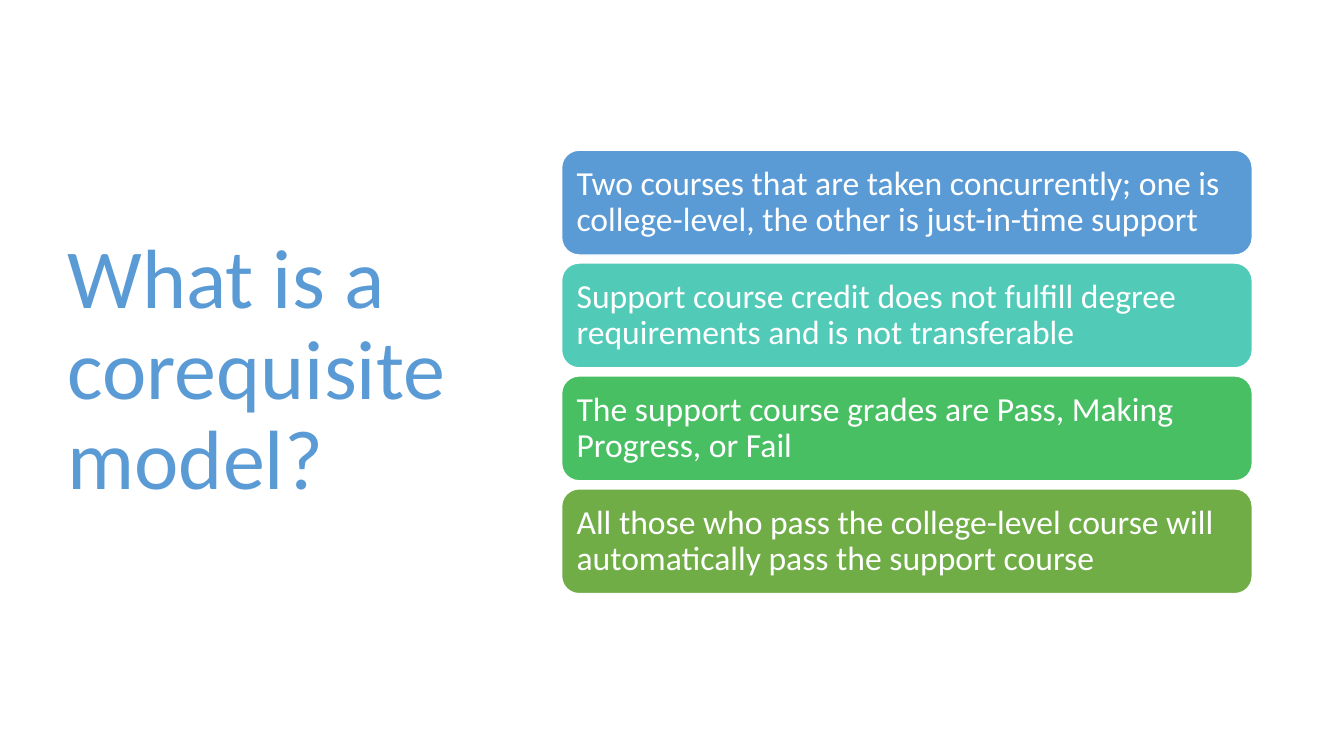
import dataclasses

import pptx
import pptx.dml.color
import pptx.enum.shapes
import pptx.enum.text
import pptx.util

WIDE, HIGH = 13.33, 7.5
LEFT, TOP = 5.57, 1.49
CARD_W, CARD_H = 6.85, 1.04
PITCH = 1.12
FONT = "Calibri"
HUES = {
    "blue": "5B9BD5",
    "teal": "52CAB8",
    "green": "49BF64",
    "olive": "70AD47",
    "white": "FFFFFF",
}


@dataclasses.dataclass
class Card:
    text: str
    hue: str


CARDS = [
    Card("Two courses that are taken concurrently; one is college-level, "
         "the other is just-in-time support", "blue"),
    Card("Support course credit does not fulfill degree requirements "
         "and is not transferable", "teal"),
    Card("The support course grades are Pass, Making Progress, or Fail", "green"),
    Card("All those who pass the college-level course will automatically "
         "pass the support course", "olive"),
]


def tint(hue: str) -> pptx.dml.color.RGBColor:
    return pptx.dml.color.RGBColor.from_string(HUES[hue])


def write(shape, text: str, *, size: float, hue: str, inset: float = 0.1) -> None:
    """Fill a shape with one left-aligned, vertically centred paragraph."""
    frame = shape.text_frame
    frame.word_wrap = True
    frame.auto_size = pptx.enum.text.MSO_AUTO_SIZE.NONE
    frame.vertical_anchor = pptx.enum.text.MSO_ANCHOR.MIDDLE
    frame.margin_left = frame.margin_right = pptx.util.Inches(inset)
    frame.margin_top = frame.margin_bottom = pptx.util.Inches(inset / 2)
    para = frame.paragraphs[0]
    para.alignment = pptx.enum.text.PP_ALIGN.LEFT
    para.line_spacing = 0.9
    run = para.add_run()
    run.text = text
    run.font.name = FONT
    run.font.size = pptx.util.Pt(size)
    run.font.color.rgb = tint(hue)


def place(shape, left: float, top: float, width: float, height: float) -> None:
    shape.left, shape.top, shape.width, shape.height = map(
        pptx.util.Inches, (left, top, width, height))


def draw(slide, card: Card, row: int) -> None:
    """Draw a card in the given row of the right-hand column."""
    spot = map(pptx.util.Inches, (LEFT, TOP + row * PITCH, CARD_W, CARD_H))
    shape = slide.shapes.add_shape(
        pptx.enum.shapes.MSO_SHAPE.ROUNDED_RECTANGLE, *spot)
    shape.shadow.inherit = False
    shape.fill.solid()
    shape.fill.fore_color.rgb = tint(card.hue)
    shape.line.color.rgb = tint("white")
    shape.line.width = pptx.util.Pt(1)
    write(shape, card.text, size=24, hue="white")


def main() -> None:
    deck = pptx.Presentation()
    deck.slide_width = pptx.util.Inches(WIDE)
    deck.slide_height = pptx.util.Inches(HIGH)
    slide = deck.slides.add_slide(deck.slide_layouts.get_by_name("Title Only"))
    title = slide.shapes.title
    place(title, 0.57, 0.68, 4.16, 6.02)
    write(title, "What is a corequisite model?", size=60, hue="blue")
    for row, card in enumerate(CARDS):
        draw(slide, card, row)
    deck.save("out.pptx")


if __name__ == "__main__":
    main()
